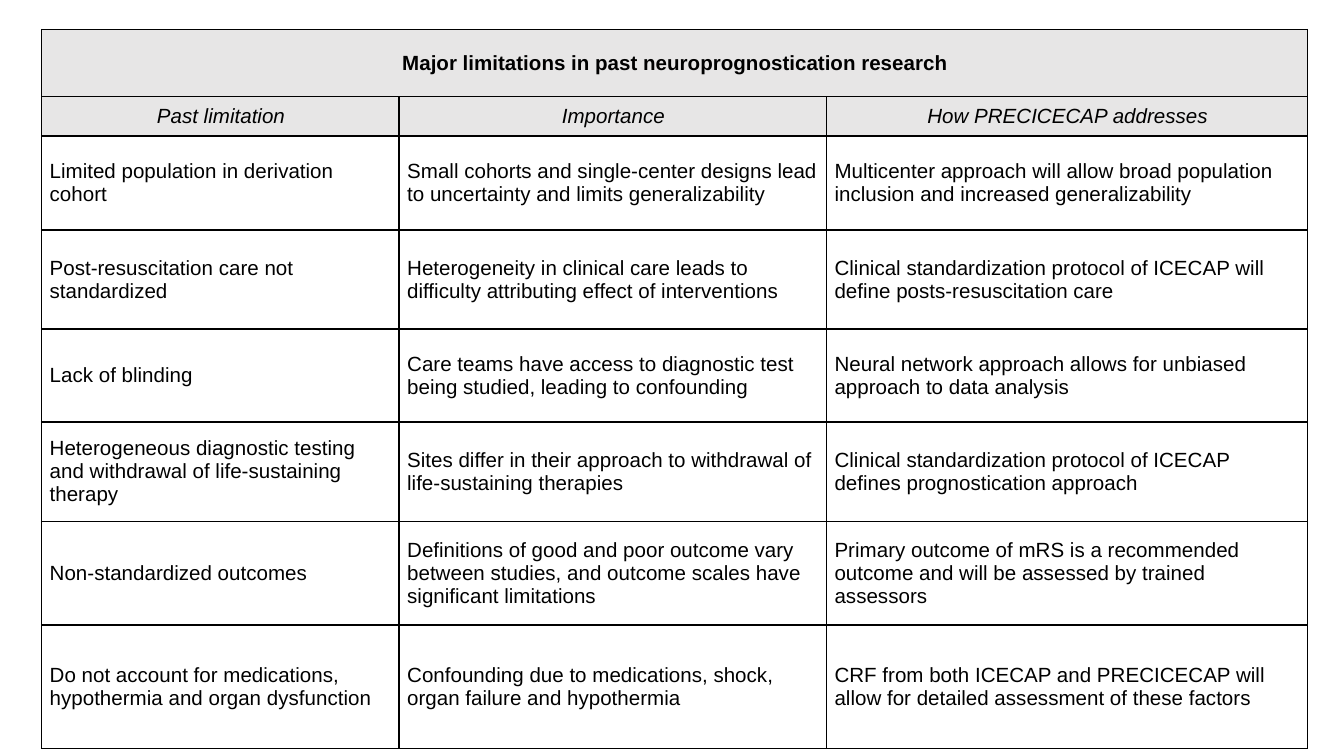
from lxml.etree import SubElement
from pptx import Presentation
from pptx.dml.color import RGBColor
from pptx.enum.text import MSO_ANCHOR, PP_ALIGN
from pptx.oxml.ns import qn
from pptx.util import Inches, Pt

BLACK, WHITE, HEADER_GREY = "000000", "FFFFFF", "E7E6E6"
COLUMN_WIDTHS = [2.66, 3.18, 3.58]
ROW_HEIGHTS = [0.5, 0.29, 0.7, 0.74, 0.69, 0.74, 0.77, 0.92]

TITLE = "Major limitations in past neuroprognostication research"
HEADINGS = ["Past limitation", "Importance", "How PRECICECAP addresses"]
LIMITATIONS = [
    ["Limited population in derivation cohort",
     "Small cohorts and single-center designs lead to uncertainty and limits generalizability",
     "Multicenter approach will allow broad population inclusion and increased generalizability"],
    ["Post-resuscitation care not standardized",
     "Heterogeneity in clinical care leads to difficulty attributing effect of interventions",
     "Clinical standardization protocol of ICECAP will define posts-resuscitation care"],
    ["Lack of blinding",
     "Care teams have access to diagnostic test being studied, leading to confounding",
     "Neural network approach allows for unbiased approach to data analysis"],
    ["Heterogeneous diagnostic testing and withdrawal of life-sustaining therapy",
     "Sites differ in their approach to withdrawal of life-sustaining therapies",
     "Clinical standardization protocol of ICECAP defines prognostication approach"],
    ["Non-standardized outcomes",
     "Definitions of good and poor outcome vary between studies, "
     "and outcome scales have significant limitations",
     "Primary outcome of mRS is a recommended outcome and will be assessed by trained assessors"],
    ["Do not account for medications, hypothermia and organ dysfunction",
     "Confounding due to medications, shock, organ failure and hypothermia",
     "CRF from both ICECAP and PRECICECAP will allow for detailed assessment of these factors"],
]


def color(hex_code):
    return RGBColor.from_string(hex_code)


def set_borders(cell, left=1, right=1, top=1, bottom=1):
    """Draw black cell edges, with widths in points; call before filling the cell."""
    properties = cell._tc.get_or_add_tcPr()
    for side, width in zip("LRTB", (left, right, top, bottom)):
        edge = SubElement(properties, qn(f"a:ln{side}"), w=str(Pt(width)))
        edge_fill = SubElement(edge, qn("a:solidFill"))
        SubElement(edge_fill, qn("a:srgbClr"), val=BLACK)


def style_cell(cell, fill):
    cell.fill.solid()
    cell.fill.fore_color.rgb = color(fill)
    cell.vertical_anchor = MSO_ANCHOR.MIDDLE
    cell.margin_left = Inches(0.06)
    cell.margin_right = Inches(0.05)
    cell.margin_top = cell.margin_bottom = Inches(0.04)


def write_cell(cell, text, align=PP_ALIGN.LEFT, bold=False, italic=False):
    paragraph = cell.text_frame.paragraphs[0]
    paragraph.alignment = align
    run = paragraph.add_run()
    run.text = text
    run.font.name = "Arial"
    run.font.size = Pt(11)
    run.font.bold = bold
    run.font.italic = italic
    run.font.color.rgb = color(BLACK)


def add_limitations_table(slide, left, top):
    table = slide.shapes.add_table(
        len(ROW_HEIGHTS), len(COLUMN_WIDTHS), Inches(left), Inches(top),
        Inches(sum(COLUMN_WIDTHS)), Inches(sum(ROW_HEIGHTS))).table
    table.first_row = table.horz_banding = False
    for column, width in zip(table.columns, COLUMN_WIDTHS):
        column.width = Inches(width)
    for row, height in zip(table.rows, ROW_HEIGHTS):
        row.height = Inches(height)

    title_cell = table.cell(0, 0)
    title_cell.merge(table.cell(0, len(COLUMN_WIDTHS) - 1))
    for cell in table.rows[0].cells:
        set_borders(cell, 0.75, 0.75, 0.75, 0.75)
        style_cell(cell, HEADER_GREY)
    write_cell(title_cell, TITLE, PP_ALIGN.CENTER, bold=True)

    for cell, heading in zip(table.rows[1].cells, HEADINGS):
        set_borders(cell, top=0.75)
        style_cell(cell, HEADER_GREY)
        write_cell(cell, heading, PP_ALIGN.CENTER, italic=True)

    for row_number, limitation in enumerate(LIMITATIONS, start=2):
        for cell, text in zip(table.rows[row_number].cells, limitation):
            set_borders(cell)
            style_cell(cell, WHITE)
            write_cell(cell, text)


def main():
    presentation = Presentation()
    presentation.slide_width = Inches(10)
    presentation.slide_height = Inches(10 * 9 / 16)
    slide = presentation.slides.add_slide(presentation.slide_layouts[6])
    add_limitations_table(slide, 0.31, 0.22)
    presentation.save("out.pptx")


if __name__ == "__main__":
    main()
